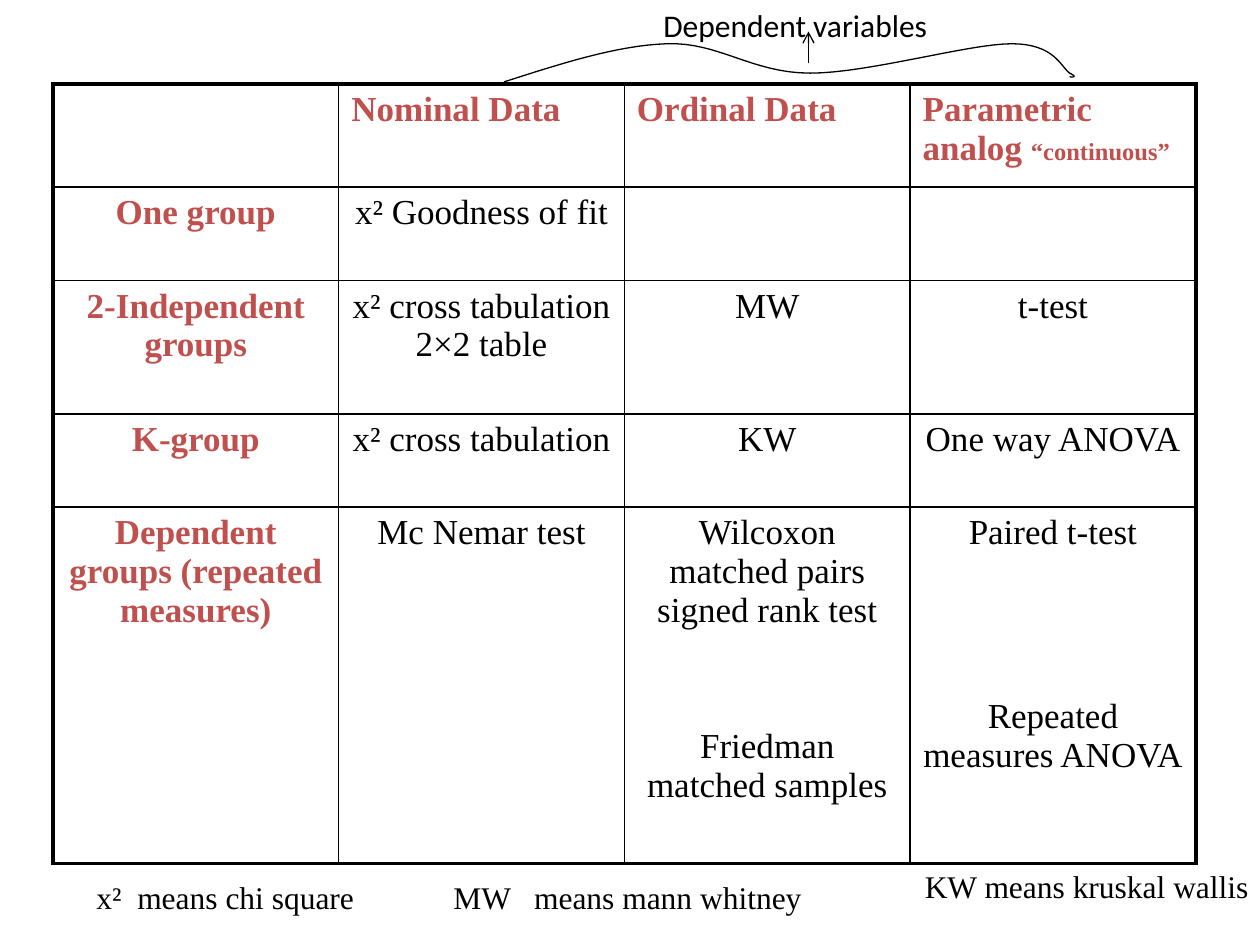
"""Build a slide that matches statistical tests to data types and group designs."""
from dataclasses import dataclass

from lxml.etree import SubElement
from pptx import Presentation
from pptx.dml.color import RGBColor
from pptx.enum.shapes import MSO_CONNECTOR as Connector
from pptx.enum.text import MSO_AUTO_SIZE as AutoSize, PP_ALIGN as Align
from pptx.oxml import parse_xml
from pptx.oxml.ns import nsdecls, qn
from pptx.util import Pt


@dataclass(frozen=True)
class Theme:
    ink: RGBColor = RGBColor(0, 0, 0)
    accent: RGBColor = RGBColor(0xC0, 0x50, 0x4D)
    serif: str = "Times New Roman"
    sans: str = "Calibri"
    cell_size: float = 20
    note_size: float = 18
    small_size: float = 14
    outer_line: float = 2.25
    inner_line: float = 1
    thin_line: float = 0.75


TOP, LEFT = 48, 30.25
COLUMN_WIDTH = 163.3
ROW_HEIGHTS = [59, 53.3, 76.3, 53.3, 203.5]
ROWS = [
    ["", "Nominal Data", "Ordinal Data", "Parametric analog |“continuous”"],
    ["One group", "x² Goodness of fit", "", ""],
    ["2-Independent groups", "x² cross tabulation 2×2 table", "MW", "t-test"],
    ["K-group", "x² cross tabulation", "KW", "One way ANOVA"],
    ["Dependent groups (repeated measures)", "Mc Nemar test",
     "Wilcoxon matched pairs signed rank test\nFriedman matched samples",
     "Paired t-test\nRepeated measures ANOVA"],
]
SECOND_TEST_GAPS = {2: 55.5, 3: 83}
NOTES = [
    ("x²  means chi square", 48, 498, 168, Align.LEFT, False),
    ("MW   means mann whitney", 252, 498, 222, Align.LEFT, True),
    ("KW means kruskal wallis", 504, 492, 234, Align.CENTER, True),
]
BRACE_START = (288, 46.8)
BRACE_CURVES = [
    [(319.7, 36.7), (352, 26), (381, 25)],
    [(410.4, 23.8), (429.8, 41.8), (463, 41.8)],
    [(496, 41.8), (553.7, 25), (578.2, 25)],
    [(602.6, 25), (606.2, 38.2), (611.3, 41.8)],
    [(617, 44.6), (611.3, 43.9), (611.3, 43.9)],
]


def curve_points(start, curves, steps=16):
    """Return points along a chain of cubic curves."""
    points = []
    for first, second, end in curves:
        for step in range(1, steps + 1):
            t = step / steps
            weights = ((1 - t) ** 3, 3 * t * (1 - t) ** 2, 3 * t * t * (1 - t), t ** 3)
            anchors = (start, first, second, end)
            points.append(tuple(
                Pt(sum(w * anchor[axis] for w, anchor in zip(weights, anchors)))
                for axis in (0, 1)))
        start = end
    return points


class SlideWriter:
    """Draw styled elements on the current slide."""

    def __init__(self, slide, theme):
        self.slide = slide
        self.theme = theme

    def style(self, span, size, font, color, bold=False):
        """Format one run."""
        span.font.size = Pt(size)
        span.font.name = font
        span.font.bold = bold
        span.font.color.rgb = color

    def note(self, text, left, top, width, align, wrap, font):
        """Add a one-line text box."""
        box = self.slide.shapes.add_textbox(Pt(left), Pt(top), Pt(width), Pt(29))
        frame = box.text_frame
        frame.text = text
        frame.word_wrap = wrap
        frame.auto_size = AutoSize.SHAPE_TO_FIT_TEXT
        para = frame.paragraphs[0]
        para.alignment = align
        self.style(para.runs[0], self.theme.note_size, font, self.theme.ink)

    def border(self, cell, side, width):
        """Draw one edge of a cell."""
        properties = cell._tc.get_or_add_tcPr()
        edge = SubElement(properties, qn(f"a:ln{side}"), w=str(Pt(width)))
        fill = SubElement(edge, qn("a:solidFill"))
        SubElement(fill, qn("a:srgbClr"), val=str(self.theme.ink))

    def cell(self, cell, text, heading, align, gap):
        """Fill a cell, with a small run after a bar and a gap before a second line."""
        theme = self.theme
        color = theme.accent if heading else theme.ink
        cell.text_frame.text = text.replace("|", "")
        for para, line in zip(cell.text_frame.paragraphs, text.split("\n")):
            para.alignment = align
            main, _, small = line.partition("|")
            para.text = main
            for span in para.runs:
                self.style(span, theme.cell_size, theme.serif, color, heading)
            if small:
                span = para.add_run()
                span.text = small
                self.style(span, theme.small_size, theme.serif, color, heading)
        for para in cell.text_frame.paragraphs[1:]:
            para.space_before = Pt(gap)

    def table(self, rows, left, top, column_width, heights, gaps):
        """Add a grid with a heavy frame and light inner lines."""
        theme = self.theme
        last_row, last_column = len(rows) - 1, len(rows[0]) - 1
        table = self.slide.shapes.add_table(
            len(rows), len(rows[0]), Pt(left), Pt(top),
            Pt(column_width * len(rows[0])), Pt(sum(heights))).table
        table.first_row = table.horz_banding = False
        for column in table.columns:
            column.width = Pt(column_width)
        for r, (texts, height) in enumerate(zip(rows, heights)):
            table.rows[r].height = Pt(height)
            for c, text in enumerate(texts):
                cell = table.cell(r, c)
                align = Align.LEFT if r == 0 else Align.CENTER
                self.cell(cell, text, r == 0 or c == 0, align, gaps.get(c, 0))
                outer = {"L": c == 0, "R": c == last_column,
                         "T": r == 0, "B": r == last_row}
                for side, is_outer in outer.items():
                    self.border(cell, side, theme.outer_line if is_outer else theme.inner_line)
                cell.fill.background()

    def curve(self, start, curves):
        """Draw an open curved outline."""
        builder = self.slide.shapes.build_freeform(Pt(start[0]), Pt(start[1]))
        builder.add_line_segments(curve_points(start, curves), close=False)
        shape = builder.convert_to_shape()
        shape.shadow.inherit = False
        shape.fill.background()
        shape.line.color.rgb = self.theme.ink
        shape.line.width = Pt(self.theme.thin_line)

    def arrow(self, x1, y1, x2, y2):
        """Draw a line with an open arrowhead at its end."""
        arrow = self.slide.shapes.add_connector(
            Connector.STRAIGHT, Pt(x1), Pt(y1), Pt(x2), Pt(y2))
        arrow.line.color.rgb = self.theme.ink
        arrow.line.width = Pt(self.theme.thin_line)
        SubElement(arrow.line._get_or_add_ln(), qn("a:tailEnd"), type="arrow")
        arrow._element.spPr.append(parse_xml(f"<a:effectLst {nsdecls('a')}/>"))


def main():
    """Build and save the deck."""
    deck = Presentation()
    deck.slide_width, deck.slide_height = Pt(720), Pt(540)
    theme = Theme()
    page = SlideWriter(deck.slides.add_slide(deck.slide_layouts[6]), theme)
    page.table(ROWS, LEFT, TOP, COLUMN_WIDTH, ROW_HEIGHTS, SECOND_TEST_GAPS)
    for note in NOTES:
        page.note(*note, theme.serif)
    page.curve(BRACE_START, BRACE_CURVES)
    page.arrow(462, 36, 462, 18)
    page.note("Dependent variables", 372, 0, 167, Align.LEFT, False, theme.sans)
    deck.save("out.pptx")


if __name__ == "__main__":
    main()
